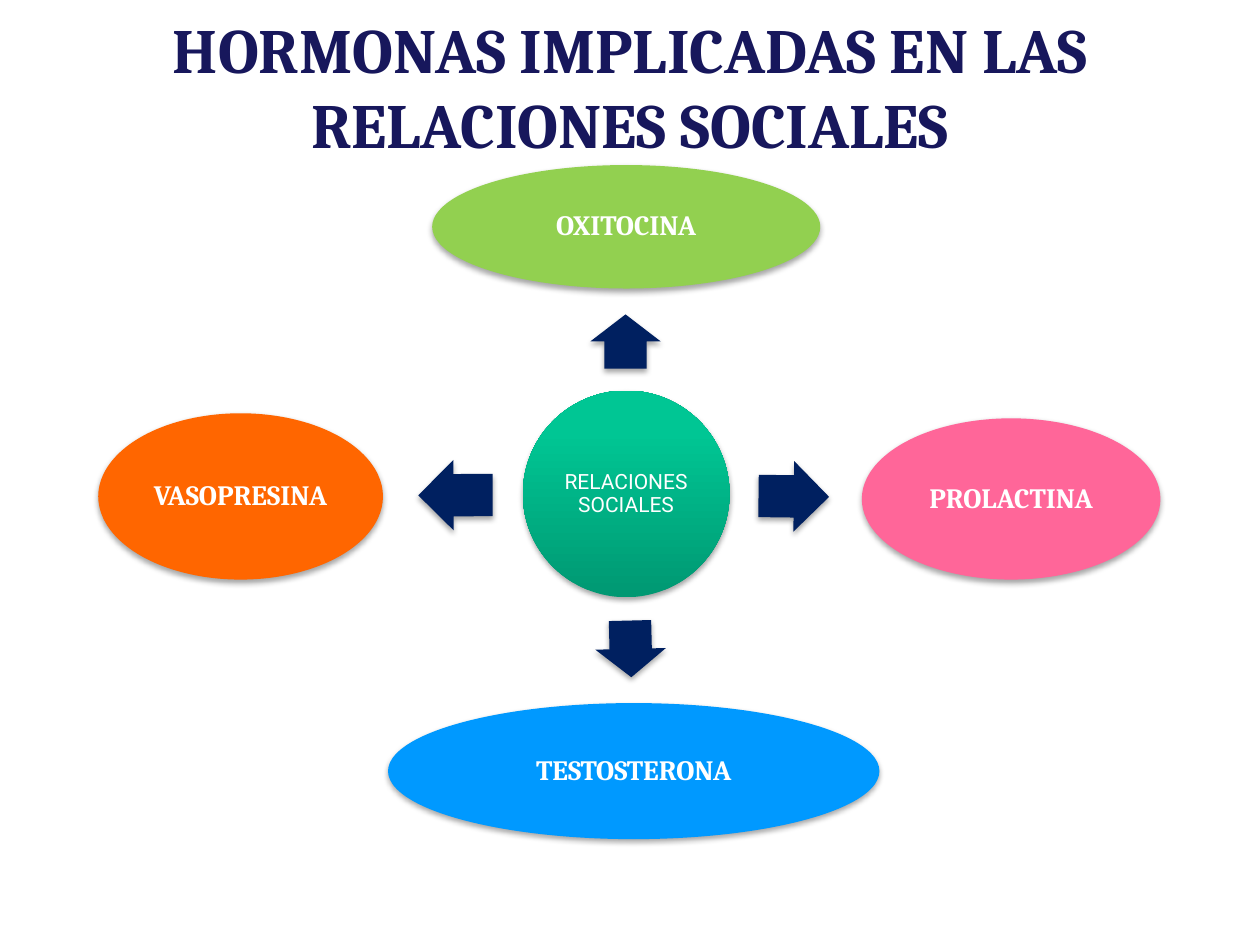
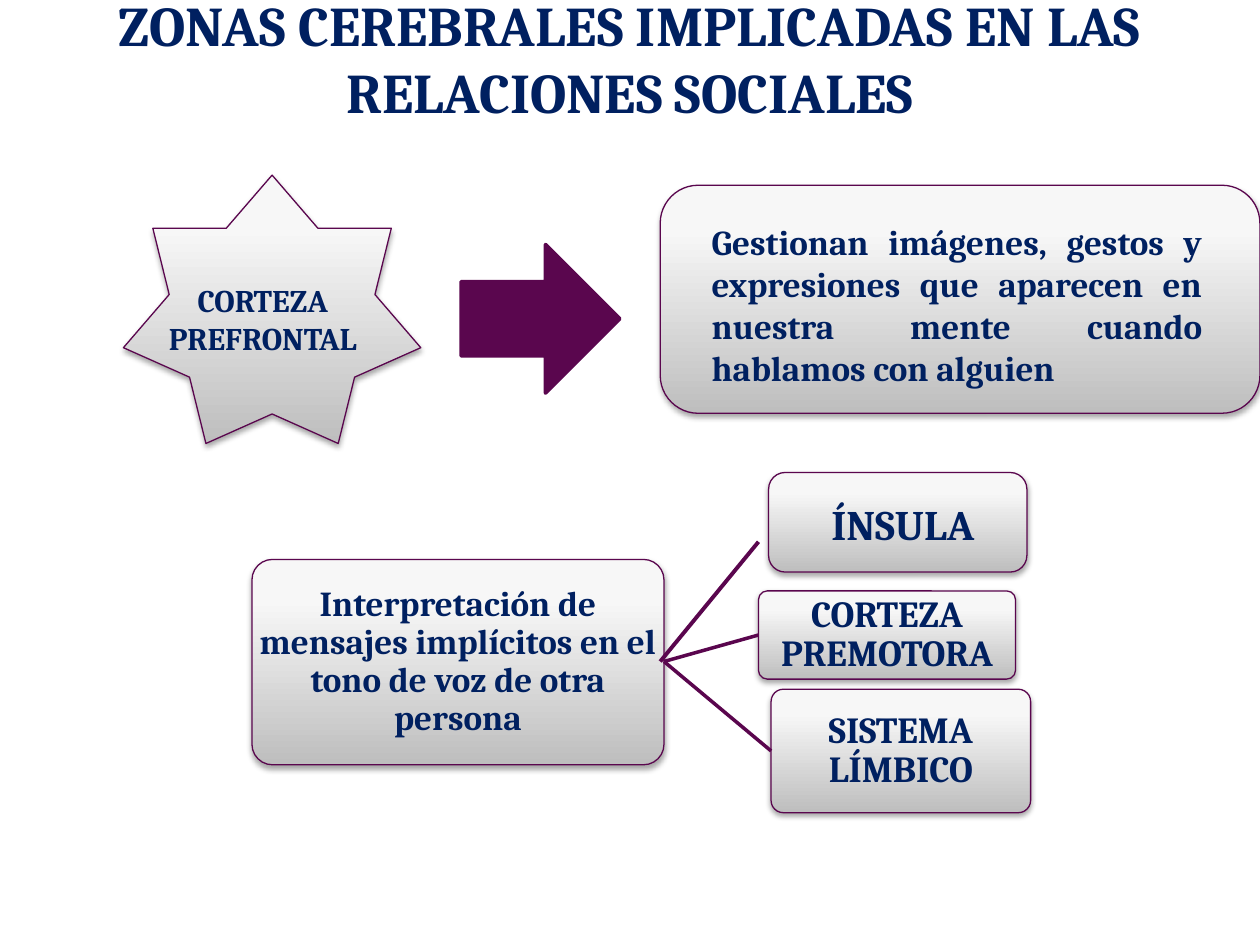
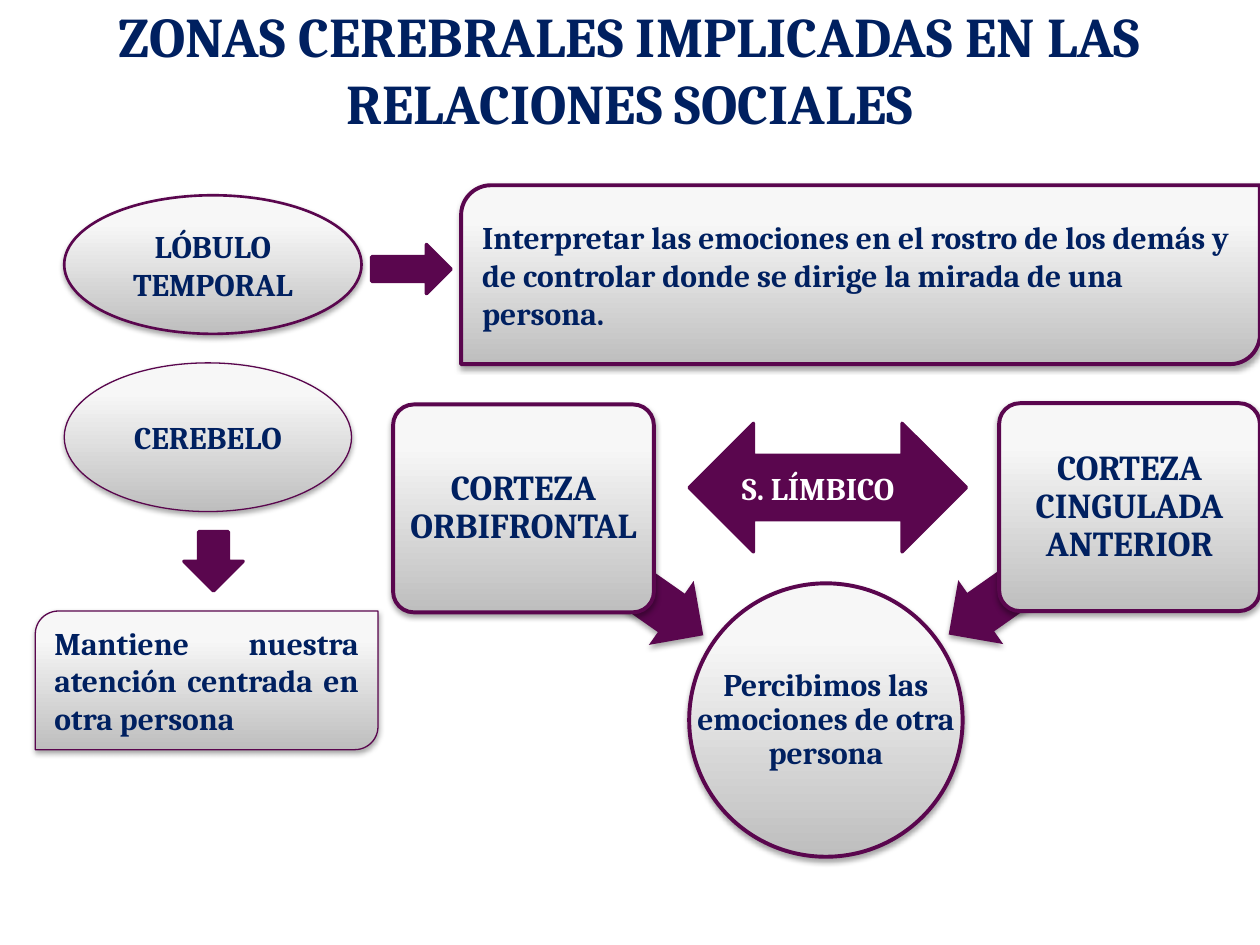
from lxml import etree
from pptx import Presentation
from pptx import util as u
from pptx.dml.color import RGBColor
from pptx.enum import shapes, text
from pptx.oxml import parse_xml
from pptx.oxml.ns import nsdecls, qn

HUE = {
    "ink": "17175C", "navy": "002060", "plum": "5A064E", "white": "FFFFFF",
    "green": "92D050", "pink": "FF6699", "blue": "0099FF", "orange": "FF6600",
}
# Gradients run from the bottom colour to the top one
FADE = {"grey": ("BEBEBE", "F7F7F7"), "jade": ("009872", "00C694")}
KIND = shapes.MSO_SHAPE
MID, LEFT, BOTH = text.PP_ALIGN.CENTER, text.PP_ALIGN.LEFT, text.PP_ALIGN.JUSTIFY
ZONES = "ZONAS CEREBRALES IMPLICADAS EN LAS RELACIONES SOCIALES"


def draw(page, kind, at, fill="grey", line=0, adj=(), turn=0, shade=True):
    """Add a shape with a flat or graded fill, a plum outline and a soft shadow."""
    item = page.shapes.add_shape(kind, *map(u.Inches, at))
    item.rotation = turn
    for i, part in enumerate(adj):
        item.adjustments[i] = part
    if fill in FADE:
        item.fill.gradient()
        item.fill.gradient_angle = 90
        for stop, hue, spot in zip(item.fill.gradient_stops, FADE[fill], (0, 0.8)):
            stop.color.rgb = RGBColor.from_string(hue)
            stop.position = spot
    else:
        item.fill.solid()
        item.fill.fore_color.rgb = RGBColor.from_string(HUE[fill])
    if line:
        item.line.width = u.Pt(line)
        item.line.color.rgb = RGBColor.from_string(HUE["plum"])
    else:
        item.line.fill.background()
    item.shadow.inherit = False
    if shade:
        item._element.spPr.find(qn("a:effectLst")).append(parse_xml(
            f'<a:outerShdw {nsdecls("a")} blurRad="40000" dist="23000" dir="5400000" '
            'rotWithShape="0"><a:srgbClr val="000000"><a:alpha val="35000"/>'
            '</a:srgbClr></a:outerShdw>'))
    return item


def write(item, words, size=18, hue="navy", font="Cambria", bold=True,
          align=MID, gap=None, pad=None, top=False):
    """Set the text of a shape, a box or a placeholder."""
    frame = item.text_frame
    frame.word_wrap = True
    frame.auto_size = text.MSO_AUTO_SIZE.NONE
    frame.vertical_anchor = text.MSO_ANCHOR.TOP if top else text.MSO_ANCHOR.MIDDLE
    if pad is not None:
        frame.margin_left = frame.margin_right = u.Inches(pad)
        frame.margin_top = frame.margin_bottom = u.Inches(pad)
    para = frame.paragraphs[0]
    para.alignment = align
    if gap:
        para.line_spacing = gap
    run = para.add_run()
    run.text = words
    run.font.name, run.font.size, run.font.bold = font, u.Pt(size), bold
    run.font.color.rgb = RGBColor.from_string(HUE[hue])


deck = Presentation()
deck.slide_width, deck.slide_height = u.Inches(10), u.Inches(7.5)

# Slides and titles
pages = []
for words, top, high, size, hue in (
    ("HORMONAS IMPLICADAS EN LAS RELACIONES SOCIALES", 0.21, 0.94, 36, "ink"),
    (ZONES, 0, 0.92, 32, "navy"),
    (ZONES, 0.21, 0.67, 32, "navy"),
):
    page = deck.slides.add_slide(deck.slide_layouts[5])
    head = page.shapes.title
    head.left, head.top = 0, u.Inches(top)
    head.width, head.height = deck.slide_width, u.Inches(high)
    write(head, words, size, hue)
    pages.append(page)
first, second, third = pages

# Slide 1: hub, arrows and hormones
hub = draw(first, KIND.OVAL, (4.15, 3.1, 1.64, 1.64), "jade")
write(hub, "RELACIONES SOCIALES", 12, "white", "Roboto", False, gap=0.9, pad=0.02)
for at, turn in (
    ((4.75, 2.43, 0.43, 0.56), 270), ((6.02, 3.66, 0.56, 0.56), 0.7),
    ((4.78, 4.87, 0.45, 0.56), 88.6), ((3.32, 3.65, 0.59, 0.56), 179.7),
):
    draw(first, KIND.RIGHT_ARROW, at, "navy", adj=(0.6, 0.5), turn=turn)
for words, at, fill in (
    ("OXITOCINA", (3.43, 1.31, 3.08, 0.98), "green"),
    ("PROLACTINA", (6.84, 3.32, 2.37, 1.28), "pink"),
    ("TESTOSTERONA", (3.08, 5.58, 3.9, 1.08), "blue"),
    ("VASOPRESINA", (0.78, 3.28, 2.26, 1.32), "orange"),
):
    write(draw(first, KIND.OVAL, at, fill), words, 16, "white", gap=0.9, pad=0.02)

# Slide 2: prefrontal cortex and its role
draw(second, KIND.STAR_7_POINT, (0.98, 1.39, 2.36, 2.13), line=0.75)
draw(second, KIND.RIGHT_ARROW, (3.66, 1.94, 1.26, 1.18), "plum", 2, shade=False)
draw(second, KIND.ROUNDED_RECTANGLE, (5.24, 1.47, 4.76, 1.81), line=0.75)

# Slide 2: voice tone and its three zones
for words, at, size in (
    ("Interpretación de mensajes implícitos en el tono de voz de otra persona",
     (2, 4.44, 3.27, 1.63), 20),
    ("CORTEZA PREMOTORA", (6.02, 4.69, 2.04, 0.7), 21),
    ("SISTEMA LÍMBICO", (6.12, 5.47, 2.06, 0.98), 21),
):
    card = draw(second, KIND.ROUNDED_RECTANGLE, at, line=0.75, adj=(0.1,))
    write(card, words, size, gap=0.9, pad=0)
draw(second, KIND.ROUNDED_RECTANGLE, (6.1, 3.75, 2.05, 0.79), line=0.75)
for ends, wide in (
    ((5.24, 5.25, 6.02, 4.3), 2.25),
    ((5.27, 5.25, 6.02, 5.04), 2),
    ((5.27, 5.25, 6.12, 5.96), 2),
):
    link = second.shapes.add_connector(
        shapes.MSO_CONNECTOR.STRAIGHT, *map(u.Inches, ends))
    link.line.width = u.Pt(wide)
    link.line.color.rgb = RGBColor.from_string(HUE["plum"])
    etree.SubElement(link._element.spPr, qn("a:effectLst"))

# Slide 3: arrows to the circle, then the circle and both cortex cards
for at, turn in (((3.99, 4.23, 1.75, 0.62), 215), ((7.37, 4.22, 1.76, 0.62), 324.9)):
    draw(third, KIND.LEFT_ARROW, at, "plum", adj=(0.6, 0.5), turn=turn)
ring = (5.47, 4.63, 2.17, 2.17)
draw(third, KIND.OVAL, ring, line=2.25)
for words, at in (
    ("CORTEZA ORBIFRONTAL", (3.12, 3.21, 2.07, 1.65)),
    ("CORTEZA CINGULADA ANTERIOR", (7.93, 3.2, 2.07, 1.65)),
):
    card = draw(third, KIND.ROUNDED_RECTANGLE, at, line=2.25, adj=(0.1,))
    write(card, words, 20, gap=0.9, pad=0.04)

# Slide 3: temporal lobe and cerebellum
leaf = KIND.ROUND_2_DIAG_RECTANGLE
for words, kind, at, line, align in (
    ("Interpretar las emociones en el rostro de los demás y de controlar "
     "donde se dirige la mirada de una persona.",
     leaf, (3.66, 1.47, 6.34, 1.42), 2.25, LEFT),
    ("LÓBULO TEMPORAL", KIND.OVAL, (0.51, 1.55, 2.36, 1.1), 1.5, MID),
    ("CEREBELO", KIND.OVAL, (0.51, 2.88, 2.28, 1.18), 0.75, MID),
    ("Mantiene nuestra atención centrada en otra persona",
     leaf, (0.28, 4.85, 2.72, 1.1), 0.75, BOTH),
):
    write(draw(third, kind, at, line=line), words, align=align)
for kind, at in (
    (KIND.DOWN_ARROW, (1.46, 4.22, 0.47, 0.47)),
    (KIND.RIGHT_ARROW, (2.95, 1.94, 0.63, 0.39)),
    (KIND.LEFT_RIGHT_ARROW, (5.47, 3.36, 2.2, 1.02)),
):
    draw(third, kind, at, "plum", 2, shade=False)

# Text boxes laid over shapes
for page, words, at, form in (
    (second, "CORTEZA PREFRONTAL", (1.14, 2.18, 1.89, 0.71), {"top": True}),
    (second, "Gestionan imágenes, gestos y expresiones que aparecen en nuestra "
     "mente cuando hablamos con alguien",
     (5.55, 1.7, 4.09, 1.45), {"size": 20, "align": BOTH, "top": True}),
    (second, "ÍNSULA", (6.18, 3.91, 1.97, 0.5), {"size": 24, "top": True}),
    (third, "Percibimos las emociones de otra persona", ring,
     {"gap": 0.9, "pad": 0.01}),
    (third, "S. LÍMBICO", (5.79, 3.67, 1.57, 0.4),
     {"hue": "white", "align": LEFT, "top": True}),
):
    write(page.shapes.add_textbox(*map(u.Inches, at)), words, **form)

deck.save("out.pptx")
